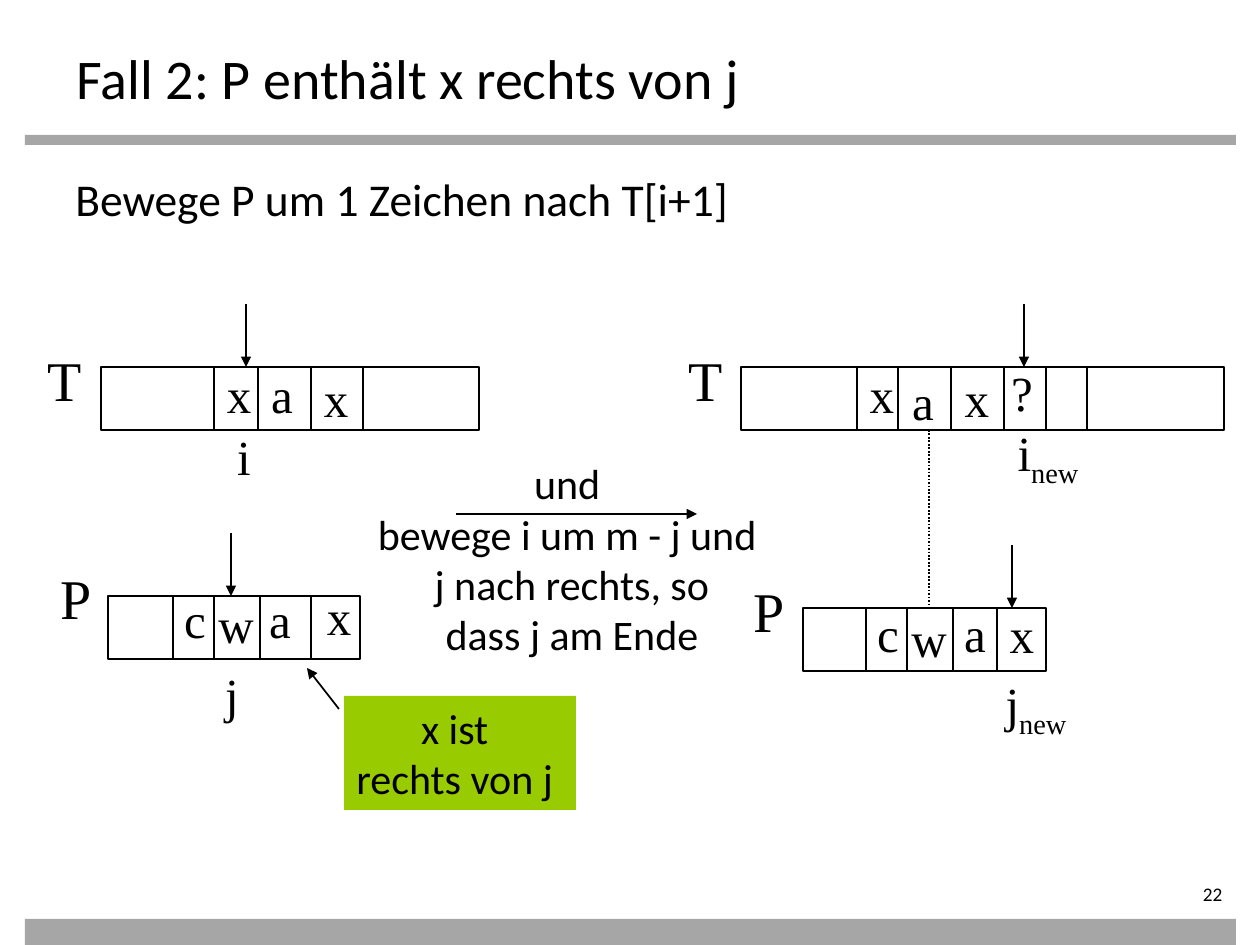
from pptx import Presentation
from pptx import util as u
from pptx.dml.color import RGBColor
from pptx.enum import dml, shapes, text
from lxml import etree

PX = 914400 / 126
A = "{http://schemas.openxmlformats.org/drawingml/2006/main}"
COL = {"ink": "000000", "bar": "A6A6A6", "note": "99CC00"}
COL = {name: RGBColor.from_string(value) for name, value in COL.items()}

pres = Presentation()
pres.slide_width, pres.slide_height = u.Inches(10), u.Inches(7.5)
slide = pres.slides.add_slide(pres.slide_layouts[5])
parts = slide.shapes


def write(box, words, size, face="Calibri", align="CENTER", anchor="MIDDLE", wrap=False):
    frame = box.text_frame
    frame.text = words
    frame.word_wrap = wrap
    frame.auto_size = text.MSO_AUTO_SIZE.NONE
    frame.vertical_anchor = getattr(text.MSO_ANCHOR, anchor)
    for para in frame.paragraphs:
        para.alignment = getattr(text.PP_ALIGN, align)
        for run in para.runs:
            run.font.size, run.font.name = u.Pt(size), face
            run.font.color.rgb = COL["ink"]
    return frame


def draw(x1, y1, x2, y2, arrow=False):
    line = parts.add_connector(shapes.MSO_CONNECTOR.STRAIGHT,
                               *[round(v * PX) for v in (x1, y1, x2, y2)])
    line.line.color.rgb, line.line.width = COL["ink"], u.Pt(1)
    if arrow:
        etree.SubElement(line.line._get_or_add_ln(), A + "tailEnd", type="triangle")
    etree.SubElement(line._element.spPr, A + "effectLst")
    return line


# Title
title = parts.title
title.left, title.top, title.width, title.height = [
    round(v * PX) for v in (64, 37, 1134, 69)]
write(title, "Fall 2: P enthält x rechts von j", 32, align="LEFT", anchor="TOP", wrap=True)

# Grey bars and green note
blocks = [(25, 135, 1211, 10, "bar"), (25, 919, 1211, 26, "bar"),
          (344, 696, 232, 114, "note")]
for *place, fill in blocks:
    block = parts.add_shape(shapes.MSO_SHAPE.RECTANGLE, *[round(v * PX) for v in place])
    block.shadow.inherit = False
    block.fill.solid()
    block.fill.fore_color.rgb = COL[fill]
    block.line.fill.background()
    if fill == "note":
        note = write(block, "x ist\nrechts von j", 24)
        note.margin_right = round(23 * PX)

# Bullet line
body = parts.add_textbox(*[round(v * PX) for v in (63, 165, 1134, 684)])
frame = body.text_frame
props = frame.paragraphs[0]._p.get_or_add_pPr()
props.set("marL", str(round(48 * PX)))
props.set("indent", str(round(-48 * PX)))
etree.SubElement(props, A + "buFont", typeface="Arial")
etree.SubElement(props, A + "buChar", char="•")
write(body, "Bewege P um 1 Zeichen nach T[i+1]", 26, align="LEFT", anchor="TOP", wrap=True)

# Tapes: left, top, width, cell borders, pointer
tapes = [
    (101, 367, 378, (214, 258, 311, 363), 246),
    (108, 596, 252, (173, 214, 260, 311), 231),
    (741, 367, 483, (857, 898, 951, 1004, 1046, 1087), 1024),
    (803, 608, 243, (866, 907, 953, 997), 1012),
]
TALL = 63
for left, top, wide, cuts, mark in tapes:
    tape = parts.add_shape(shapes.MSO_SHAPE.RECTANGLE,
                           *[round(v * PX) for v in (left, top, wide, TALL)])
    tape.shadow.inherit = False
    tape.fill.background()
    tape.line.color.rgb, tape.line.width = COL["ink"], u.Pt(1)
    for cut in cuts:
        draw(cut, top, cut, top + TALL)
    draw(mark, top - TALL, mark, top, arrow=True)

# Other arrows and the dotted match line
draw(456, 514, 697, 514, arrow=True)
draw(339, 709, 307, 668, arrow=True)
draw(929, 430, 929, 608).line.dash_style = dml.MSO_LINE.ROUND_DOT

# Letters: text, centre x, centre y
signs = [
    ("T", 65, 379), ("x", 239, 394), ("a", 282, 394), ("x", 336, 398), ("i", 244, 456),
    ("P", 76, 597), ("c", 195, 619), ("w", 236, 624), ("a", 280, 619), ("x", 339, 616),
    ("j", 232, 694),
    ("T", 706, 379), ("x", 882, 394), ("a", 923, 401), ("x", 977, 398), ("?", 1022, 392),
    ("inew", 1048, 456),
    ("P", 769, 610), ("c", 888, 633), ("w", 929, 638), ("a", 975, 633), ("x", 1022, 634),
    ("jnew", 1036, 707),
]
for sign, x, y in signs:
    size = 32 if sign in "TP" else 28
    wide, tall = (94 if len(sign) > 1 else 60), (80 if size == 32 else 72)
    box = parts.add_textbox(*[round(v * PX) for v in (x - wide / 2, y - tall / 2, wide, tall)])
    para = write(box, sign[0], size, "Times New Roman").paragraphs[0]
    if len(sign) > 1:
        sub = para.add_run()
        sub.text = sign[1:]
        sub.font.size, sub.font.name = u.Pt(size), "Times New Roman"
        sub.font.color.rgb = COL["ink"]
        sub.font._element.set("baseline", "-25000")

# Step in the middle
step = parts.add_textbox(*[round(v * PX) for v in (357, 450, 430, 217)])
write(step, "und \nbewege i um m - j und \nj nach rechts, so\ndass j am Ende", 24)

# Slide number
page = parts.add_textbox(*[round(v * PX) for v in (1096, 882, 139, 28)])
frame = write(page, "22", 11, align="RIGHT", anchor="TOP", wrap=True)
frame.margin_top = frame.margin_bottom = frame.margin_left = 0

pres.save("out.pptx")
